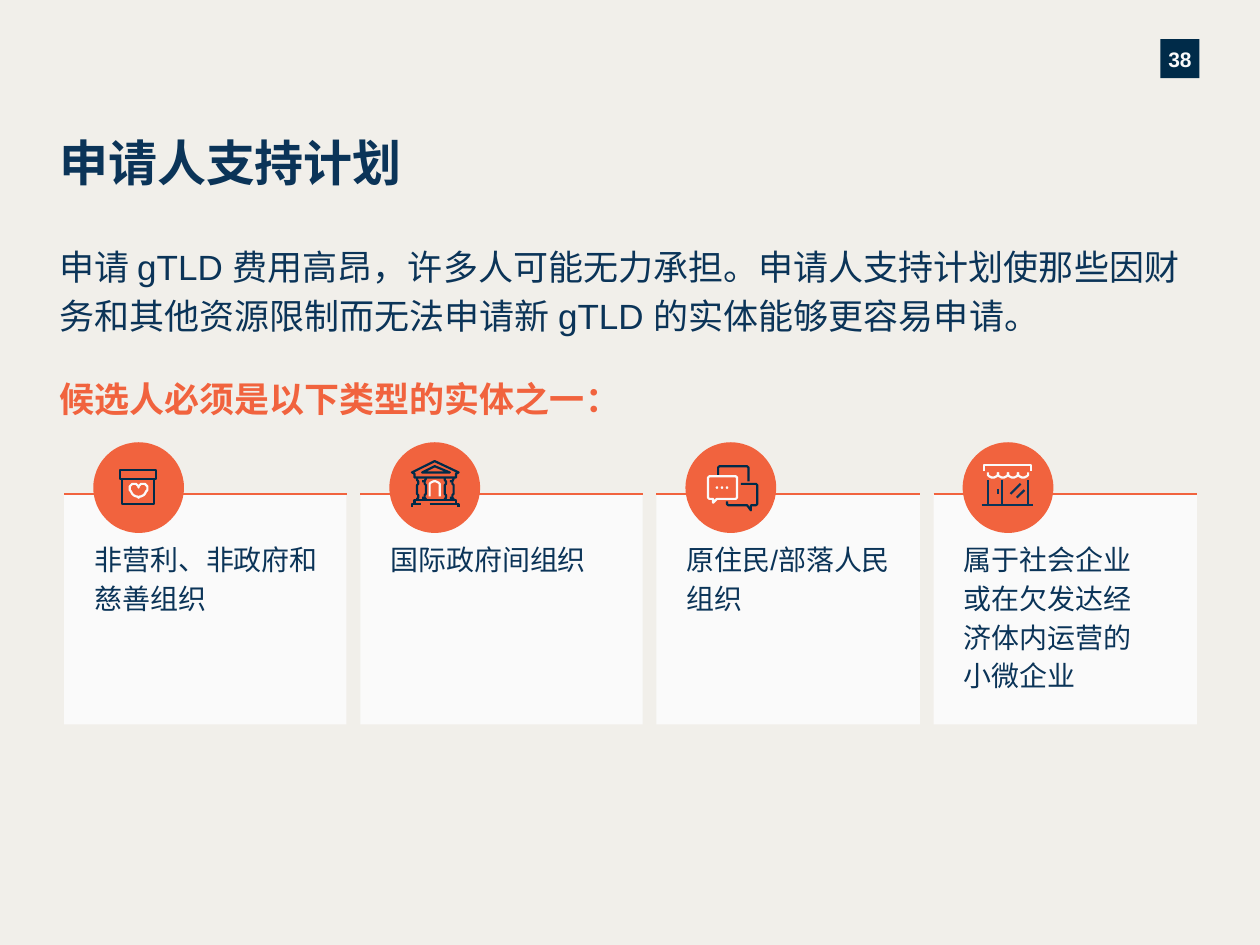
from pptx import Presentation
from pptx.dml.color import RGBColor as RGB
from pptx.enum.shapes import MSO_CONNECTOR as Link, MSO_SHAPE as Shape
from pptx.enum.text import MSO_ANCHOR as Anchor, MSO_AUTO_SIZE as Fit, PP_ALIGN as Align
from pptx.oxml.ns import qn
from pptx.util import Inches, Pt
from lxml.etree import SubElement

SAND = RGB(0xF1, 0xEF, 0xEA)
WHITE = RGB(0xFA, 0xFA, 0xFA)
BLUE = RGB(0x0B, 0x34, 0x58)
DARK = RGB(0x00, 0x2B, 0x49)
CORAL = RGB(0xF1, 0x63, 0x3E)
UNIT = Inches(0.01)


def write(frame, text, size, color, bold=False, font="Arial", space=1.15, pad=(0, 0, 0, 0)):
    frame.word_wrap = True
    frame.auto_size = Fit.NONE
    frame.vertical_anchor = Anchor.TOP
    left, top, right, bottom = map(Inches, pad)
    frame.margin_left, frame.margin_top = left, top
    frame.margin_right, frame.margin_bottom = right, bottom
    para = frame.paragraphs[0]
    para.text = text
    para.alignment = Align.LEFT
    para.line_spacing = space
    for run in para.runs:
        run.font.size = Pt(size)
        run.font.name = font
        run.font.bold = bold
        run.font.color.rgb = color
    return para


def block(slide, kind, box, color):
    shape = slide.shapes.add_shape(kind, *map(Inches, box))
    shape.shadow.inherit = False
    shape.fill.solid()
    shape.fill.fore_color.rgb = color
    shape.line.fill.background()
    return shape


def rule(slide, x1, y1, x2, y2, color):
    line = slide.shapes.add_connector(Link.STRAIGHT, *map(Inches, (x1, y1, x2, y2)))
    line.line.color.rgb = color
    line.line.width = Pt(1.25)
    SubElement(line._element.spPr, qn("a:effectLst"))


def curve(start, one, two, end):
    def blend(t, a, b, c, d):
        s = 1 - t
        return s**3 * a + 3 * s * s * t * b + 3 * s * t * t * c + t**3 * d

    pairs = list(zip(start, one, two, end))
    return [tuple(blend(i / 8, *pair) for pair in pairs) for i in range(9)]


class Icon:
    def __init__(self, slide, x, y):
        self.slide, self.x, self.y = slide, x, y

    def draw(self, points, color=DARK, close=False):
        pen = self.slide.shapes.build_freeform(*points[0], scale=UNIT)
        pen.add_line_segments(points[1:], close=close)
        shape = pen.convert_to_shape(Inches(self.x), Inches(self.y))
        shape.shadow.inherit = False
        shape.fill.background()
        shape.line.color.rgb = color
        shape.line.width = Pt(1.25)

    def line(self, x1, y1, x2, y2, color=BLUE):
        x, y = self.x, self.y
        rule(self.slide, x + x1 / 100, y + y1 / 100, x + x2 / 100, y + y2 / 100, color)

    def dot(self, x, y):
        box = (self.x + x / 100 - 0.01, self.y + y / 100 - 0.01, 0.02, 0.02)
        block(self.slide, Shape.OVAL, box, WHITE)


def charity(icon):
    for x1, y1, x2, y2 in ((21, 22, 50, 29), (23, 29, 48, 49)):
        icon.draw([(x1, y1), (x2, y1), (x2, y2), (x1, y2)], close=True)
    half = (curve((36, 44), (36, 44), (43, 41), (43, 36))
            + curve((43, 36), (43, 34), (41, 33), (40, 33))
            + curve((40, 33), (37, 33), (36, 35), (36, 36)))
    icon.draw(half + [(72 - x, y) for x, y in reversed(half)], WHITE, True)


def bank(icon):
    icon.draw([(53, 28), (20, 28), (20, 25), (18, 24), (36, 15), (55, 24), (53, 25)], close=True)
    icon.draw([(36, 19), (26, 24), (48, 24)], close=True)
    icon.draw([(20, 49), (20, 46), (53, 46), (53, 49)])
    icon.draw([(32, 49), (55, 49), (55, 51)])
    icon.draw([(18, 51), (18, 49), (25, 49)])
    icon.draw([(32, 43)] + curve((32, 35), (32, 30), (40, 30), (40, 35)) + [(40, 43)], WHITE)
    for x in (22, 44):
        icon.draw([(x, 28), (x, 30)] + curve((x + 1, 31), (x, 36), (x, 39), (x + 1, 44))
                  + [(x, 45), (x, 46)])
        icon.draw(curve((x + 6, 31), (x + 7, 36), (x + 7, 39), (x + 6, 44)))
        icon.draw([(x + 4, 31), (x + 6, 31), (x + 7, 29), (x + 7, 28)])
        icon.draw([(x + 4, 44), (x + 6, 44), (x + 7, 45), (x + 7, 46)])


def chat(icon):
    icon.draw([(40, 27), (19, 27), (18, 28), (18, 44), (19, 45), (22, 45), (22, 48),
               (25, 45), (40, 45), (41, 44), (41, 28)], WHITE, True)
    icon.draw([(33, 47), (33, 49), (34, 50), (49, 50), (52, 54), (52, 50), (56, 50),
               (57, 49), (57, 34), (56, 33), (44, 33)])
    icon.draw([(26, 26), (26, 20), (27, 19), (49, 19), (50, 20), (50, 31)])
    for x in (25, 29, 33):
        icon.dot(x, 36)


def shop(icon):
    for x in (20, 31, 52):
        icon.line(x, 30, x, 50)
    for x in range(20, 52, 8):
        icon.draw(curve((x, 24), (x, 29.3), (x + 8, 29.3), (x + 8, 24)), WHITE)
    icon.draw([(17, 23), (17, 18), (54, 18), (54, 23)], WHITE)
    icon.line(15, 50, 56, 50)
    icon.line(28, 37, 28, 41)
    icon.line(46, 33, 38, 41)
    icon.line(49, 38, 43, 44)


def card(slide, x, y, wide, high, text, draw):
    panel = block(slide, Shape.RECTANGLE, (x, y, wide, high), WHITE)
    write(panel.text_frame, text, 16, BLUE, pad=(0.24, 0.35, 0.16, 0.2))
    rule(slide, x, y, x + wide, y, CORAL)
    left, top = x + 0.23, y - 0.41
    block(slide, Shape.OVAL, (left, top, 0.72, 0.72), CORAL)
    draw(Icon(slide, left, top))


def cards(slide, x, y, high, gap):
    items = (
        (2.24, "非营利、非政府和慈善组织", charity),
        (2.24, "国际政府间组织", bank),
        (2.09, "原住民/部落人民组织", chat),
        (2.09, "属于社会企业\n或在欠发达经\n济体内运营的\n小微企业", shop),
    )
    for wide, text, draw in items:
        card(slide, x, y, wide, high, text, draw)
        x += wide + gap


def badge(slide, box):
    shape = block(slide, Shape.RECTANGLE, box, DARK)
    para = write(shape.text_frame, "38", 12, WHITE, True, space=1.08)
    para.alignment = Align.CENTER
    shape.text_frame.vertical_anchor = Anchor.MIDDLE


def head(slide, x, y, wide, high):
    title = slide.shapes.title
    title.left, title.top, title.width, title.height = map(Inches, (x, y, wide, high))
    write(title.text_frame, "申请人支持计划", 28, BLUE, True, "Noto Sans")


def note(slide, box, text, color, **style):
    shape = slide.shapes.add_textbox(*map(Inches, box))
    write(shape.text_frame, text, 20, color, **style)


def main():
    deck = Presentation()
    deck.slide_width, deck.slide_height = Inches(10), Inches(7.5)
    slide = deck.slides.add_slide(deck.slide_layouts[5])
    slide.background.fill.solid()
    slide.background.fill.fore_color.rgb = SAND
    badge(slide, (9.21, 0.31, 0.31, 0.31))
    head(slide, 0.47, 0.98, 5.5, 0.55)
    note(slide, (0.47, 1.9, 9.02, 1.49),
         "申请 gTLD 费用高昂，许多人可能无力承担。申请人支持计划使那些因"
         "财务和其他资源限制而无法申请新 gTLD 的实体能够更容易申请。", BLUE)
    note(slide, (0.47, 2.95, 7.77, 0.43), "候选人必须是以下类型的实体之一：",
         CORAL, bold=True, font="Noto Sans")
    cards(slide, 0.51, 3.92, 1.83, 0.11)
    deck.save("out.pptx")


if __name__ == "__main__":
    main()
